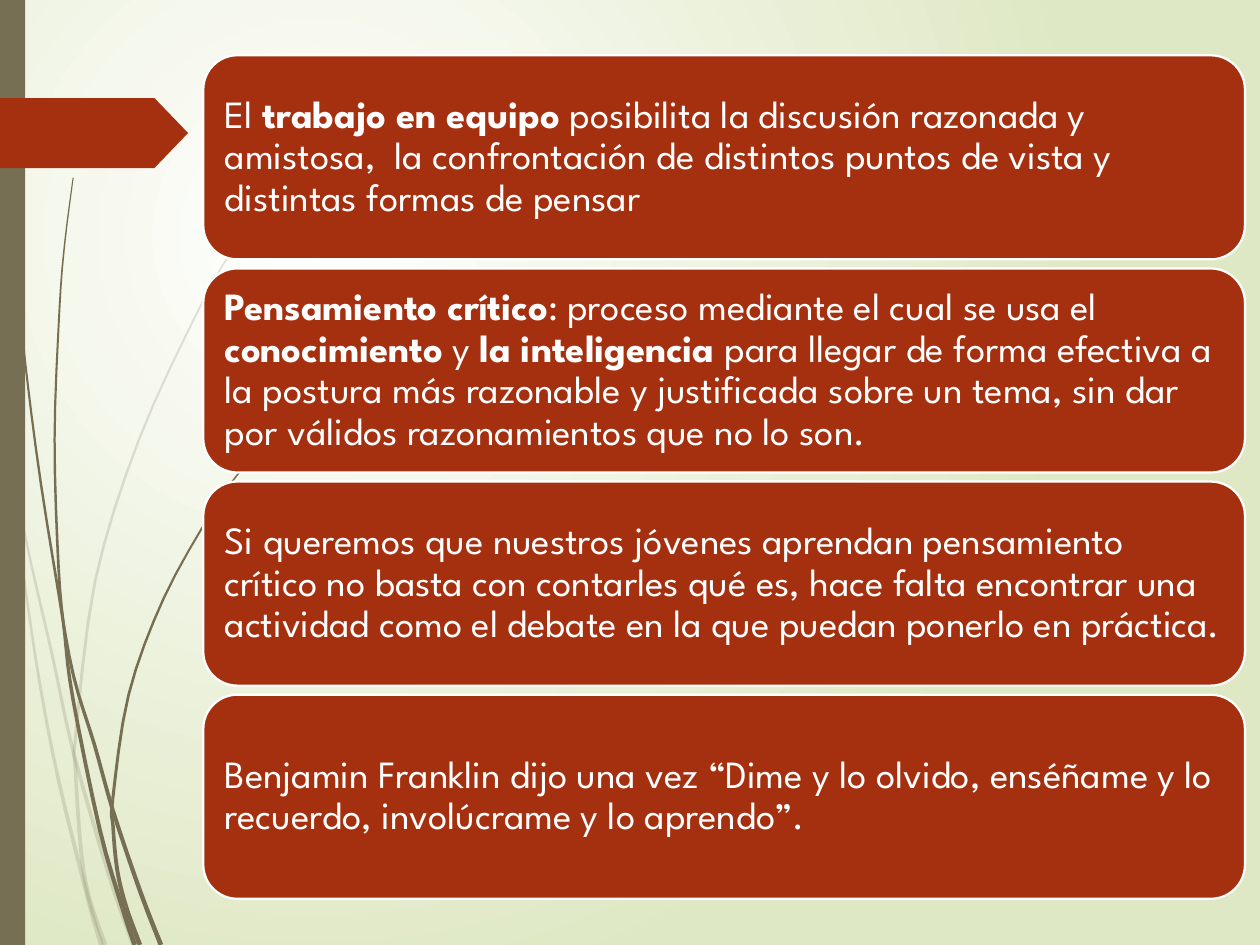
import math
from dataclasses import dataclass

from lxml import etree
from pptx import Presentation
from pptx import util as u
from pptx.dml.color import RGBColor
from pptx.enum import shapes, text
from pptx.oxml import ns


@dataclass(frozen=True)
class Theme:
    card: str = "A53010"
    stem: str = "766F54"
    light: str = "FFFFFF"
    backdrop: str = "DFE8C4"
    font: str = "League Spartan"
    body: float = 22
    outline: float = 1.25


THEME = Theme()

PALE_STEMS = [
    [[(0, 209), (5.3, 250)],
     [(14.4, 306), (30, 375), (42, 430)],
     [(62, 499), (76.3, 540)]],
    [[(5.5, 252), (9.5, 295), (14.8, 338), (23, 392), (33.5, 446), (50.4, 514)],
     [(58, 540)]],
    [[(156, 110), (134, 141), (114, 176), (79.5, 251), (54.4, 332), (43.2, 421)],
     [(43, 438)],
     [(46.2, 485), (50.6, 512)],
     [(60, 540)]],
]
DARK_STEMS = [
    [[(1.8, 0), (4, 79), (10.4, 168), (20.5, 256), (33, 336)],
     [(42, 386), (54, 425.5), (64.5, 463)],
     [(80, 509), (92, 540)]],
    [[(41.8, 101.5), (37, 139), (34, 176.5), (31.2, 251), (33.5, 325)],
     [(37, 363)],
     [(41.8, 400), (57, 474), (70, 519)],
     [(77, 540)]],
    [[(155.5, 248), (137.5, 269), (121.3, 292), (93.5, 342), (73.5, 397), (64.4, 457)],
     [(64.6, 472)],
     [(67, 497), (72, 518)],
     [(80, 540)]],
]
CARDS = [
    "El **trabajo en equipo** posibilita la discusión razonada y amistosa,  la "
    "confrontación de distintos puntos de vista y distintas formas de pensar",
    "**Pensamiento crítico**: proceso mediante el cual se usa el **conocimiento** y "
    "**la inteligencia **para llegar de forma efectiva a la postura más razonable y "
    "justificada sobre un tema, sin dar por válidos razonamientos que no lo son.",
    "Si queremos que nuestros jóvenes aprendan pensamiento crítico no basta con "
    "contarles qué es, hace falta encontrar una actividad como el debate en la que "
    "puedan ponerlo en práctica.",
    "Benjamin Franklin dijo una vez “Dime y lo olvido, enséñame y lo recuerdo, "
    "involúcrame y lo aprendo”.",
]
STEPS = 4


def smooth_curve(points):
    padded = [points[0], *points, points[-1]]
    curve = []
    for a, b, c, d in zip(padded, padded[1:], padded[2:], padded[3:]):
        for i in range(STEPS):
            t = i / STEPS
            curve.append(tuple(
                q + t / 2 * (r - p + t * (2 * p - 5 * q + 4 * r - s + t * (3 * (q - r) + s - p)))
                for p, q, r, s in zip(a, b, c, d)))
    return curve + [points[-1]]


class SlideBuilder:
    def __init__(self, slide, theme):
        self.slide = slide
        self.theme = theme

    def background(self):
        fill = self.slide.background.fill
        fill.gradient()
        for stop, colour in zip(fill.gradient_stops, (self.theme.light, self.theme.backdrop)):
            stop.color.rgb = RGBColor.from_string(colour)
        grad = self.slide.background._cSld.find(".//" + ns.qn("a:gradFill"))
        grad.remove(grad.find(ns.qn("a:lin")))
        radial = etree.SubElement(grad, ns.qn("a:path"), path="circle")
        etree.SubElement(radial, ns.qn("a:fillToRect"),
                         l="50000", t="50000", r="100000", b="100000")

    def paint(self, sp, colour, opacity=100):
        sp.shadow.inherit = False
        sp.fill.solid()
        sp.fill.fore_color.rgb = RGBColor.from_string(colour)
        sp.line.fill.background()
        if opacity < 100:
            clr = sp._element.spPr.find(".//" + ns.qn("a:srgbClr"))
            etree.SubElement(clr, ns.qn("a:alpha"), val=str(opacity * 1000))

    def shape(self, kind, left, top, width, height, colour):
        sp = self.slide.shapes.add_shape(
            kind, u.Pt(left), u.Pt(top), u.Pt(width), u.Pt(height))
        self.paint(sp, colour)
        return sp

    def outline(self, edge, opacity):
        points = [(u.Pt(x), u.Pt(y)) for x, y in edge]
        builder = self.slide.shapes.build_freeform(*points[0])
        builder.add_line_segments(points[1:], close=True)
        self.paint(builder.convert_to_shape(), self.theme.stem, opacity)

    def stem(self, pieces, opacity=100, tip=0.6, base=2.7):
        curve = smooth_curve([point for piece in pieces for point in piece])
        left, right = [], []
        last = len(curve) - 1
        for i, (x, y) in enumerate(curve):
            x0, y0 = curve[max(i - 1, 0)]
            x1, y1 = curve[min(i + 1, last)]
            angle = math.atan2(y1 - y0, x1 - x0)
            half = (tip + (base - tip) * i / last) / 2
            dx, dy = half * math.sin(angle), half * math.cos(angle)
            left.append((x - dx, y + dy))
            right.append((x + dx, y - dy))
        start, count = 0, 0
        for piece in pieces:
            count += len(piece)
            end = (count - 1) * STEPS
            self.outline(left[start:end + 1] + right[start:end + 1][::-1], opacity)
            start = end

    def card(self, content, left, top, width, height):
        sp = self.shape(shapes.MSO_SHAPE.ROUNDED_RECTANGLE,
                        left, top, width, height, self.theme.card)
        sp.line.color.rgb = RGBColor.from_string(self.theme.light)
        sp.line.width = u.Pt(self.theme.outline)
        tf = sp.text_frame
        tf.word_wrap = True
        tf.vertical_anchor = text.MSO_ANCHOR.MIDDLE
        tf.margin_left = tf.margin_right = tf.margin_top = tf.margin_bottom = u.Pt(6.6)
        p = tf.paragraphs[0]
        p.alignment = text.PP_ALIGN.LEFT
        p.line_spacing = 0.9
        for i, part in enumerate(content.split("**")):
            if part:
                r = p.add_run()
                r.text = part
                r.font.name = self.theme.font
                r.font.size = u.Pt(self.theme.body)
                r.font.bold = i % 2 == 1
                r.font.color.rgb = RGBColor.from_string(self.theme.light)


def main():
    prs = Presentation()
    prs.slide_width, prs.slide_height = u.Pt(720), u.Pt(540)
    page = SlideBuilder(prs.slides.add_slide(prs.slide_layouts[6]), THEME)
    page.background()
    for pieces in PALE_STEMS:
        page.stem(pieces, opacity=20)
    for pieces in DARK_STEMS:
        page.stem(pieces)
    page.shape(shapes.MSO_SHAPE.RECTANGLE, 0, 0, 14.4, 540, THEME.stem)
    marker = page.shape(shapes.MSO_SHAPE.PENTAGON, 0, 56, 107.5, 40, THEME.card)
    marker.adjustments[0] = 0.48
    for i, content in enumerate(CARDS):
        page.card(content, 116.2, 31.6 + i * 121.8, 595.2, 116.6)
    prs.save("out.pptx")


if __name__ == "__main__":
    main()
